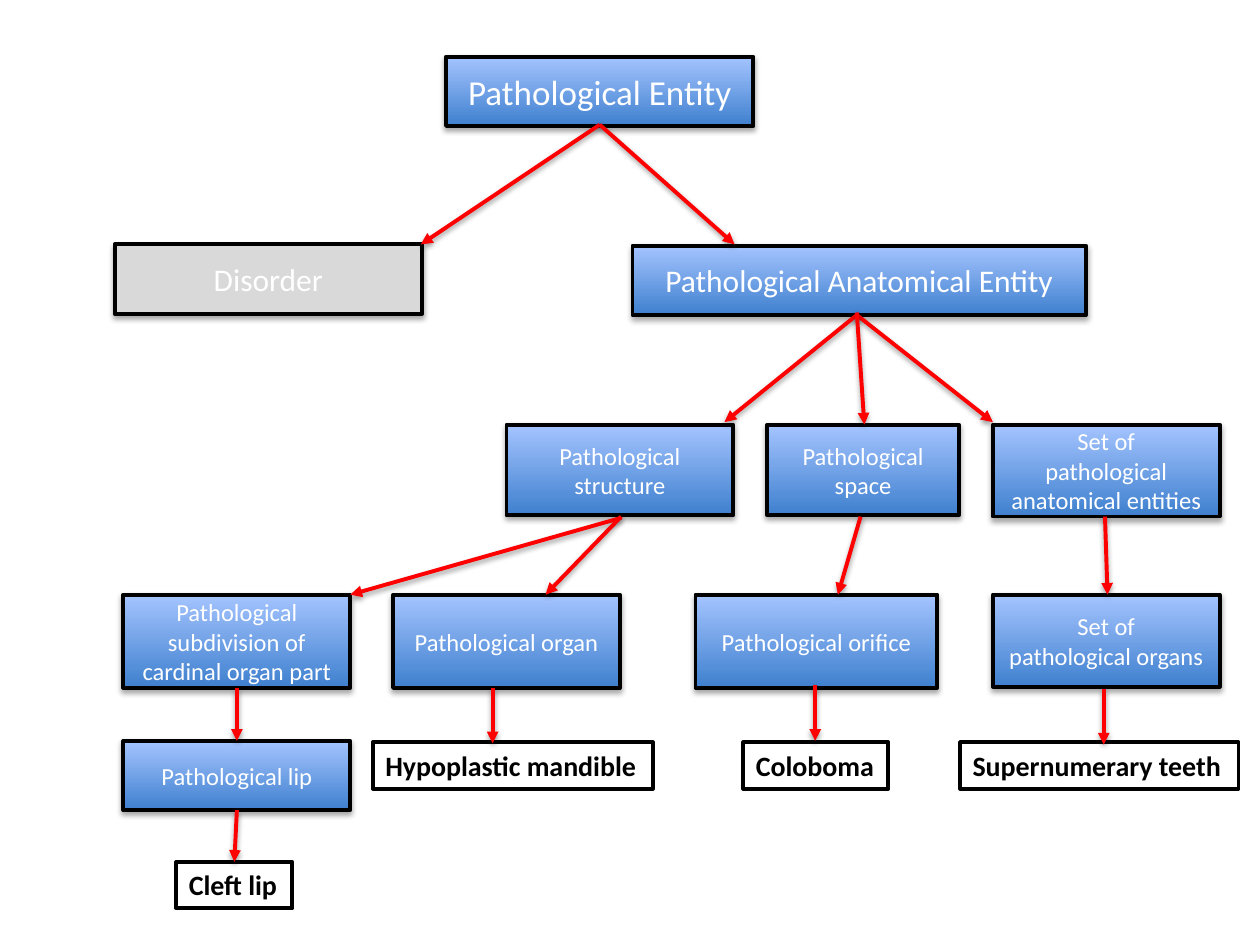
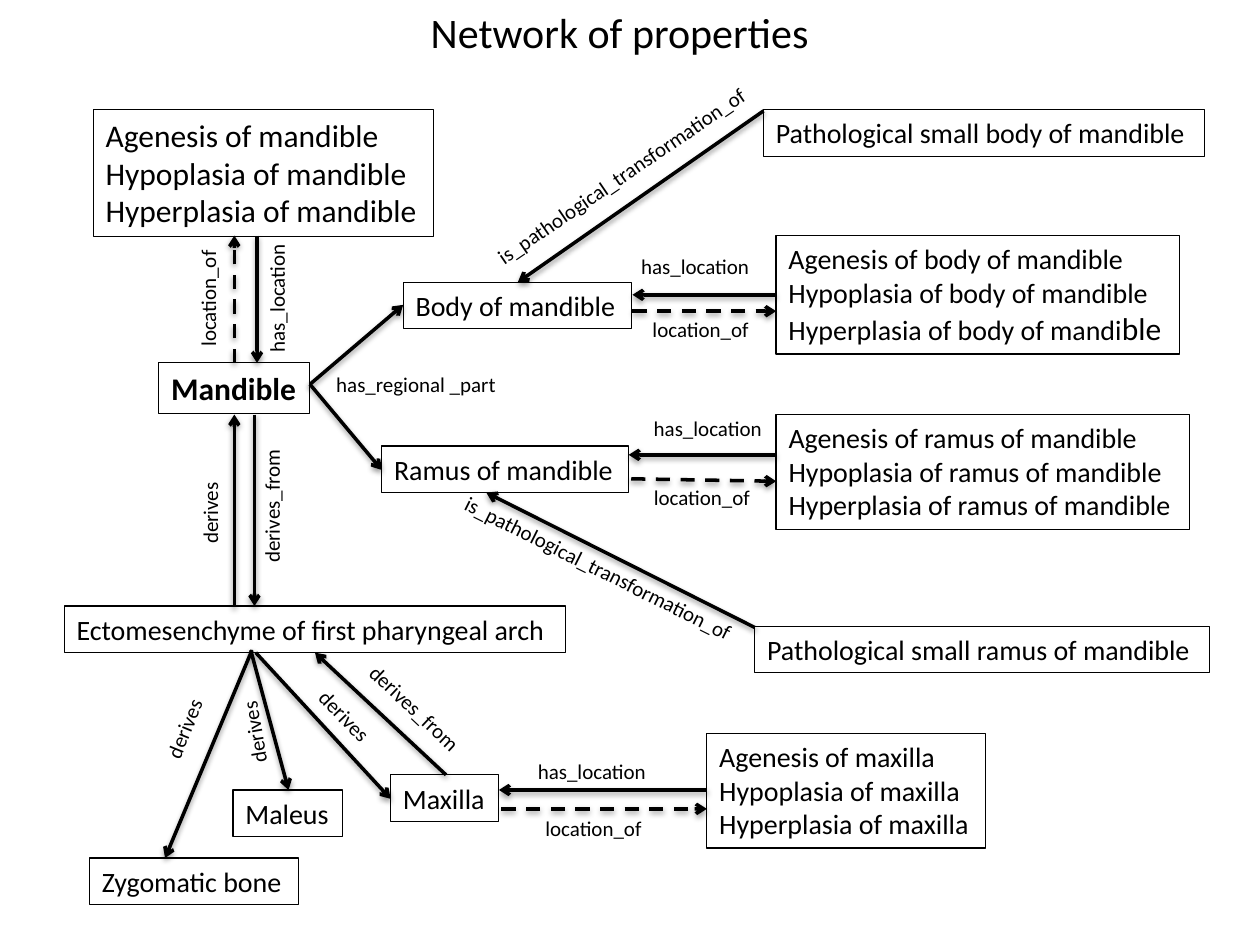
"""Build two slides: a tree of pathological entities and a network of properties."""
from dataclasses import dataclass

from lxml.etree import SubElement
from pptx import Presentation
from pptx.dml.color import RGBColor
from pptx.enum.dml import MSO_LINE
from pptx.enum.shapes import MSO_CONNECTOR, MSO_SHAPE
from pptx.enum.text import MSO_ANCHOR, MSO_AUTO_SIZE, PP_ALIGN
from pptx.oxml.ns import qn
from pptx.util import Emu, Pt

SCALE = 9144


@dataclass(frozen=True)
class Theme:
    font: str = "Calibri"
    black: str = "000000"
    white: str = "FFFFFF"
    red: str = "FF0000"
    grey: str = "D9D9D9"
    deep: str = "3F80CE"
    pale: str = "A4C4FF"
    title: int = 24
    root: int = 20
    head: int = 18
    body: int = 16
    node: int = 14
    label: int = 12
    thick: float = 2.25
    link: float = 2
    thin: float = 0.75


THEME = Theme()


def px(*sizes):
    return [Emu(size * SCALE) for size in sizes]


def rgb(code):
    return RGBColor.from_string(code)


def shade(shape, dist, alpha):
    effects = SubElement(shape._element.spPr, qn("a:effectLst"))
    outer = SubElement(effects, qn("a:outerShdw"), blurRad="40000", dist=str(dist),
                       dir="5400000", rotWithShape="0")
    color = SubElement(outer, qn("a:srgbClr"), val=THEME.black)
    SubElement(color, qn("a:alpha"), val=str(alpha * 1000))


def stroke(shape, color, width):
    shape.line.color.rgb = rgb(color)
    shape.line.width = Pt(width)


def write(frame, text, size, color, bold=False, align=PP_ALIGN.LEFT):
    frame.text = text
    for para in frame.paragraphs:
        para.alignment = align
        para.font.name = THEME.font
        para.font.size = Pt(size)
        para.font.bold = bold
        para.font.color.rgb = rgb(color)


def add_node(slide, place, text, size=THEME.node, flat=None):
    node = slide.shapes.add_shape(MSO_SHAPE.RECTANGLE, *px(*place))
    if flat:
        node.fill.solid()
        node.fill.fore_color.rgb = rgb(flat)
    else:
        node.fill.gradient()
        node.fill.gradient_angle = 90
        for stop, color in zip(node.fill.gradient_stops, (THEME.deep, THEME.pale)):
            stop.color.rgb = rgb(color)
    stroke(node, THEME.black, THEME.thick)
    shade(node, 23000, 35)
    frame = node.text_frame
    frame.word_wrap = True
    frame.vertical_anchor = MSO_ANCHOR.MIDDLE
    write(frame, text, size, THEME.white, align=PP_ALIGN.CENTER)


def add_text(slide, place, text, size=THEME.label, bold=False, turn=0):
    box = slide.shapes.add_textbox(*px(*place))
    box.rotation = turn
    frame = box.text_frame
    frame.word_wrap = False
    frame.auto_size = MSO_AUTO_SIZE.SHAPE_TO_FIT_TEXT
    write(frame, text, size, THEME.black, bold)
    return box


def add_frame(slide, place, text, size=THEME.body, bold=False, width=THEME.thin):
    box = add_text(slide, place, text, size, bold)
    stroke(box, THEME.black, width)
    return box


def add_arrow(slide, ends, color=THEME.black, width=THEME.link, head="arrow", dash=False):
    arrow = slide.shapes.add_connector(MSO_CONNECTOR.STRAIGHT, *px(*ends))
    stroke(arrow, color, width)
    if dash:
        arrow.line.dash_style = MSO_LINE.DASH
    SubElement(arrow.line._get_or_add_ln(), qn("a:tailEnd"), type=head)
    shade(arrow, 20000, 38)


def list_forms(part):
    return "\n".join(f"{form} of {part}" for form in ("Agenesis", "Hypoplasia", "Hyperplasia"))


def draw_tree(slide):
    add_node(slide, (354, 45, 244, 55), "Pathological Entity", THEME.root)
    add_node(slide, (91, 194, 244, 55), "Disorder", THEME.head, THEME.grey)
    add_node(slide, (502, 195, 360, 55), "Pathological Anatomical Entity", THEME.head)
    for place, text in (
        ((402, 337, 180, 72), "Pathological structure"),
        ((609, 337, 152, 72), "Pathological space"),
        ((788, 337, 180, 73), "Set of\npathological anatomical entities"),
        ((98, 472, 180, 74), "Pathological subdivision of cardinal organ part"),
        ((312, 472, 180, 74), "Pathological organ"),
        ((552, 472, 192, 74), "Pathological orifice"),
        ((788, 472, 180, 73), "Set of\npathological organs"),
        ((98, 588, 180, 55), "Pathological lip"),
    ):
        add_node(slide, place, text)
    for place, text in (
        ((296, 589, 222, 37), "Hypoplastic mandible"),
        ((590, 589, 115, 37), "Coloboma"),
        ((762, 589, 221, 37), "Supernumerary teeth"),
        ((140, 684, 92, 37), "Cleft lip"),
    ):
        add_frame(slide, place, text, bold=True, width=THEME.thick)
    for ends in (
        (476, 99, 334, 194), (476, 99, 583, 194),
        (680, 250, 788, 335), (680, 250, 575, 335), (680, 248, 686, 337),
        (493, 411, 278, 472), (493, 410, 433, 472),
        (683, 410, 665, 472), (877, 410, 879, 472),
        (188, 546, 188, 588), (391, 546, 391, 590),
        (647, 544, 647, 588), (876, 547, 876, 591), (188, 643, 186, 684),
    ):
        add_arrow(slide, ends, THEME.red, THEME.thick, "triangle")


def draw_net(slide):
    add_text(slide, (332, 0, 332, 50), "Network of properties", THEME.title)
    add_frame(slide, (74, 87, 270, 101), list_forms("mandible"), THEME.head)
    add_frame(slide, (126, 288, 120, 40), "Mandible", THEME.head, True)
    for place, text in (
        ((320, 224, 181, 37), "Body of mandible"),
        ((303, 354, 196, 37), "Ramus of mandible"),
        ((51, 481, 398, 37), "Ectomesenchyme of first pharyngeal arch"),
        ((310, 615, 86, 37), "Maxilla"),
        ((185, 627, 87, 37), "Maleus"),
        ((71, 681, 166, 37), "Zygomatic bone"),
        ((606, 87, 350, 37), "Pathological small body of mandible"),
        ((599, 497, 361, 37), "Pathological small ramus of mandible"),
        ((616, 329, 328, 91), list_forms("ramus of mandible")),
        ((561, 582, 221, 91), list_forms("maxilla")),
    ):
        add_frame(slide, place, text)
    forms = add_frame(slide, (616, 187, 320, 94),
                      list_forms("body of mandible").removesuffix("ble"))
    tail = forms.text_frame.paragraphs[-1].add_run()
    tail.text = "ble"
    tail.font.size = Pt(THEME.head)

    for ends in (
        (200, 516, 131, 681), (199, 516, 229, 627), (203, 518, 310, 634),
        (354, 615, 250, 518), (186, 481, 186, 329), (202, 329, 202, 481),
        (204, 187, 204, 288), (246, 305, 320, 242), (246, 305, 303, 373),
        (616, 234, 502, 234), (616, 361, 499, 361), (561, 627, 396, 627),
        (599, 498, 386, 391), (606, 88, 411, 224),
    ):
        add_arrow(slide, ends)
    for ends in (
        (186, 288, 186, 187), (501, 380, 616, 382),
        (502, 247, 616, 247), (398, 642, 561, 642),
    ):
        add_arrow(slide, ends, dash=True)

    for text, width, spots in (
        ("has_regional _part", 151, [(257, 290, 0)]),
        ("has_location", 107,
         [(499, 196, 0), (509, 325, 0), (417, 597, 0), (166, 221, 270)]),
        ("location_of", 102,
         [(508, 246, 0), (509, 380, 0), (423, 642, 0), (114, 219, 270)]),
        ("derives_from", 113, [(159, 385, 270), (274, 548, 43.2)]),
        ("derives", 71,
         [(131, 391, 270), (111, 562, 292.2), (239, 554, 45.9), (166, 565, 260.3)]),
        ("is_pathological_transformation_of", 258,
         [(348, 437, 26.6), (366, 123, 325.7)]),
    ):
        for left, top, turn in spots:
            add_text(slide, (left, top, width, 30), text, turn=turn)


def main():
    deck = Presentation()
    deck.slide_width, deck.slide_height = px(1000, 750)
    for draw in (draw_tree, draw_net):
        draw(deck.slides.add_slide(deck.slide_layouts[6]))
    deck.save("out.pptx")


if __name__ == "__main__":
    main()
